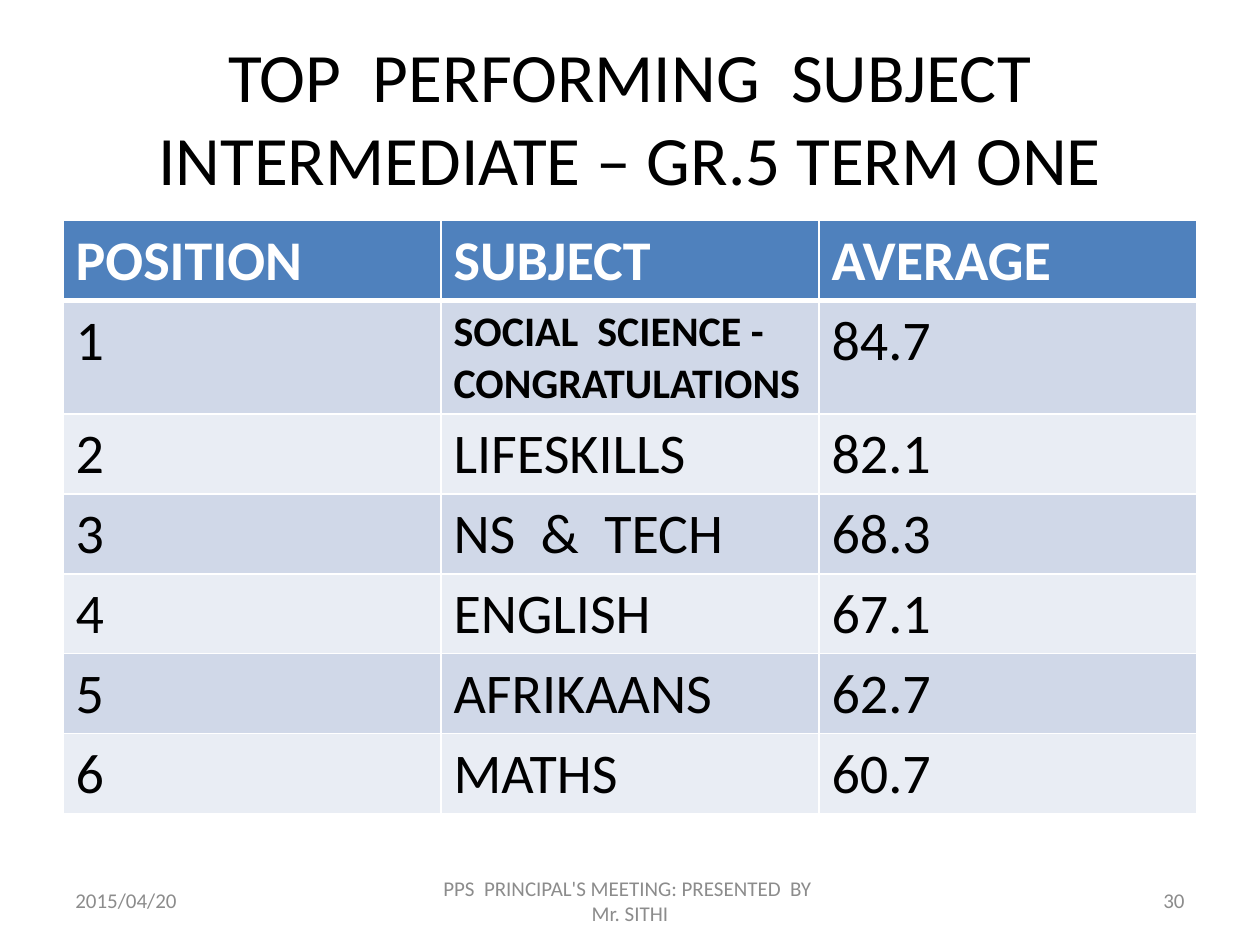
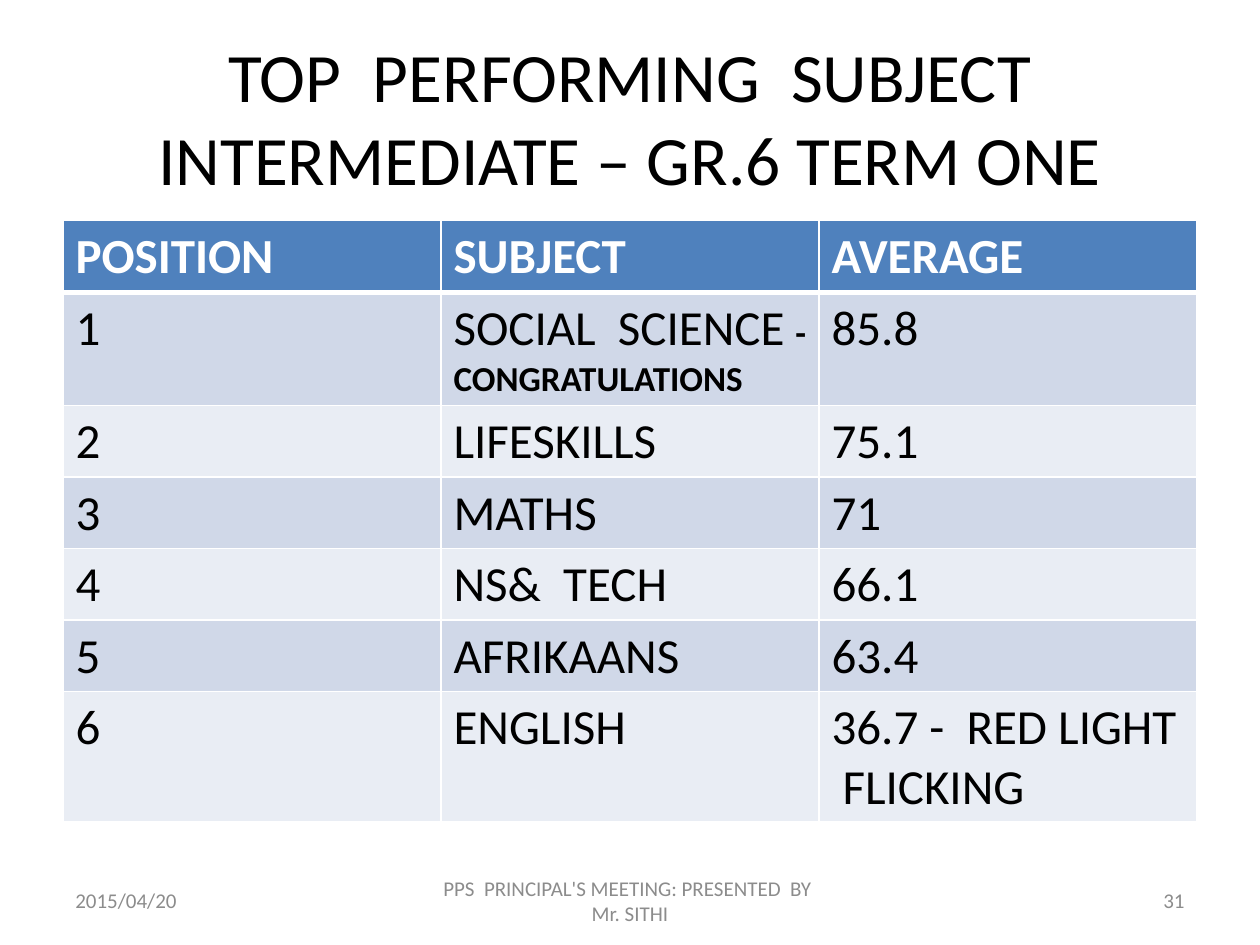
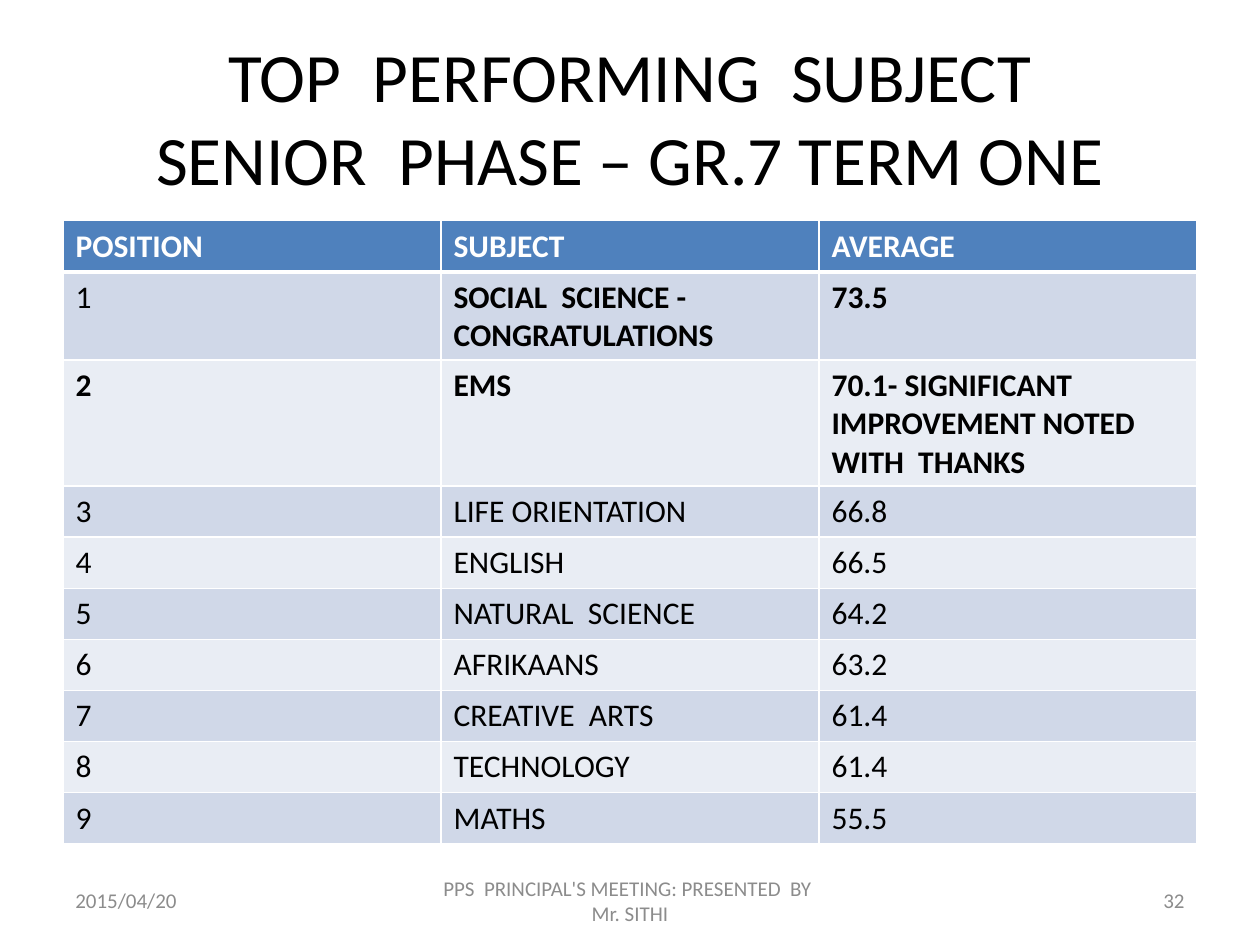
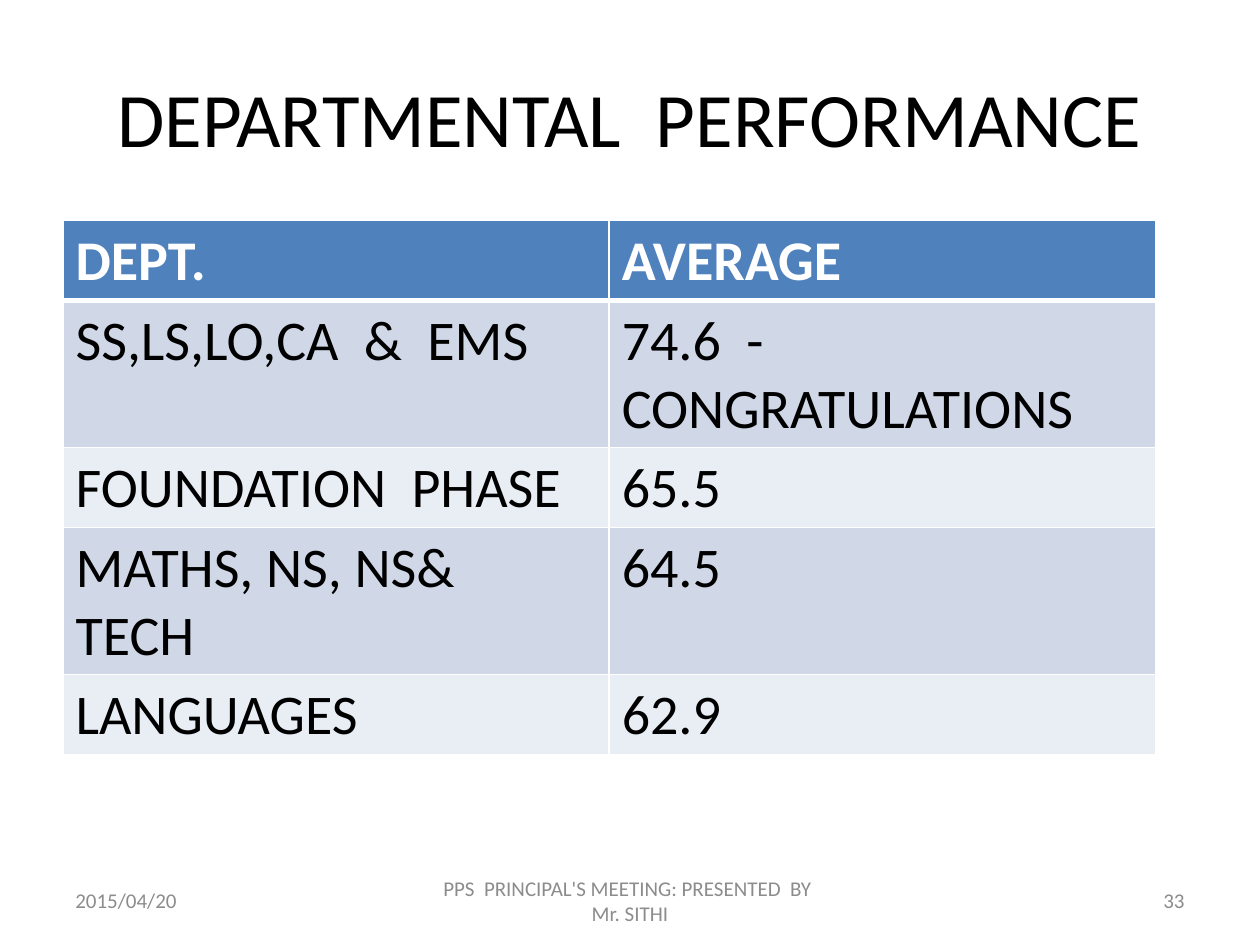
from lxml.etree import SubElement
from pptx import Presentation
from pptx.dml.color import RGBColor
from pptx.enum.text import MSO_ANCHOR, PP_ALIGN
from pptx.oxml.ns import qn
from pptx.util import Cm, Pt

# Shared style
FONT = "Calibri"
BLACK, WHITE, GREY = "000000", "FFFFFF", "8C8C8C"
HEADER_FILL = "4F81BD"
BAND_FILLS = ["D0D8E8", "E9EDF4"]
LEFT, TABLE_TOP, ROW_HEIGHT = 1.27, 4.45, 1.03
TITLE_BOX = (LEFT, 0.76, 22.86, 3.18)
FOOTER_TOP, FOOTER_HEIGHT = 17.65, 1.01
DATE = "2015/04/20"
MEETING = "PPS  PRINCIPAL'S MEETING: PRESENTED  BY  Mr. SITHI"
FIRST_PAGE = 30

# Content: a cell is plain text, or a list of (text, size, bold) runs
SUBJECT_HEADER = ["POSITION", "SUBJECT", "AVERAGE"]
SLIDES = [
    {
        "title": "TOP  PERFORMING  SUBJECT\nINTERMEDIATE – GR.5 TERM ONE",
        "title_size": 39.6, "size": 32, "col_width": 7.62,
        "rows": [
            SUBJECT_HEADER,
            ["1", [("SOCIAL  SCIENCE - CONGRATULATIONS", 24, True)], "84.7"],
            ["2", "LIFESKILLS", "82.1"],
            ["3", "NS  &  TECH", "68.3"],
            ["4", "ENGLISH", "67.1"],
            ["5", "AFRIKAANS", "62.7"],
            ["6", "MATHS", "60.7"],
        ],
    },
    {
        "title": "TOP  PERFORMING  SUBJECT\nINTERMEDIATE – GR.6 TERM ONE",
        "title_size": 39.6, "size": 28, "col_width": 7.62,
        "rows": [
            SUBJECT_HEADER,
            ["1", [("SOCIAL  SCIENCE ", 28, False), ("- CONGRATULATIONS", 20, True)], "85.8"],
            ["2", "LIFESKILLS", "75.1"],
            ["3", "MATHS", "71"],
            ["4", "NS&  TECH", "66.1"],
            ["5", "AFRIKAANS", "63.4"],
            ["6", "ENGLISH", "36.7 -  RED LIGHT  FLICKING"],
        ],
    },
    {
        "title": "TOP  PERFORMING  SUBJECT\nSENIOR  PHASE – GR.7 TERM ONE",
        "title_size": 39.6, "size": 18, "col_width": 7.62,
        "rows": [
            SUBJECT_HEADER,
            ["1", [("SOCIAL  SCIENCE - CONGRATULATIONS", 18, True)], [("73.5", 18, True)]],
            [[("2", 18, True)], [("EMS", 18, True)],
             [("70.1- SIGNIFICANT IMPROVEMENT NOTED WITH  THANKS", 18, True)]],
            ["3", "LIFE ORIENTATION", "66.8"],
            ["4", "ENGLISH", "66.5"],
            ["5", "NATURAL  SCIENCE", "64.2"],
            ["6", "AFRIKAANS", "63.2"],
            ["7", "CREATIVE  ARTS", "61.4"],
            ["8", "TECHNOLOGY", "61.4"],
            ["9", "MATHS", "55.5"],
        ],
    },
    {
        "title": "DEPARTMENTAL  PERFORMANCE",
        "title_size": 44, "size": 32, "col_width": 11.01,
        "rows": [
            ["DEPT.", "AVERAGE"],
            ["SS,LS,LO,CA  &  EMS", "74.6  -  CONGRATULATIONS"],
            ["FOUNDATION  PHASE", "65.5"],
            ["MATHS, NS, NS&  TECH", "64.5"],
            ["LANGUAGES", "62.9"],
        ],
    },
]


def rgb(color):
    return RGBColor.from_string(color)


def style(r, size, color, bold=False):
    r.font.name = FONT
    r.font.size = Pt(size)
    r.font.bold = bold
    r.font.color.rgb = rgb(color)


def add_text(s, box, text, size, color, align):
    tf = s.shapes.add_textbox(*map(Cm, box)).text_frame
    tf.word_wrap = True
    tf.vertical_anchor = MSO_ANCHOR.MIDDLE
    p = tf.paragraphs[0]
    p.text = text
    p.alignment = align
    for r in p.runs:
        style(r, size, color)


def set_borders(cell, top, bottom):
    tcPr = cell._tc.get_or_add_tcPr()
    for side, width in (("L", 1), ("R", 1), ("T", top), ("B", bottom)):
        ln = SubElement(tcPr, qn(f"a:ln{side}"), w=str(Pt(width)))
        fill = SubElement(ln, qn("a:solidFill"))
        SubElement(fill, qn("a:srgbClr"), val=WHITE)


def add_table(s, rows, size, col_width):
    n_rows, n_cols = len(rows), len(rows[0])
    table = s.shapes.add_table(n_rows, n_cols, Cm(LEFT), Cm(TABLE_TOP),
                               Cm(col_width * n_cols), Cm(ROW_HEIGHT * n_rows)).table
    for column in table.columns:
        column.width = Cm(col_width)
    for i, row in enumerate(rows):
        table.rows[i].height = Cm(ROW_HEIGHT)
        header = i == 0
        for j, content in enumerate(row):
            cell = table.cell(i, j)
            # A thick rule separates the header from the body
            set_borders(cell, top=3 if i == 1 else 1, bottom=3 if header else 1)
            cell.fill.solid()
            cell.fill.fore_color.rgb = rgb(HEADER_FILL if header else BAND_FILLS[(i - 1) % 2])
            runs = [(content, size, header)] if isinstance(content, str) else content
            p = cell.text_frame.paragraphs[0]
            for text, run_size, bold in runs:
                r = p.add_run()
                r.text = text
                style(r, run_size, WHITE if header else BLACK, bold)


def add_footer(s, page):
    for left, width, text, align in (
        (LEFT, 5.93, DATE, PP_ALIGN.LEFT),
        (8.68, 8.04, MEETING, PP_ALIGN.CENTER),
        (18.2, 5.93, str(page), PP_ALIGN.RIGHT),
    ):
        add_text(s, (left, FOOTER_TOP, width, FOOTER_HEIGHT), text, 12, GREY, align)


def main():
    prs = Presentation()
    prs.slide_width, prs.slide_height = Cm(25.4), Cm(19.05)
    for page, content in enumerate(SLIDES, FIRST_PAGE):
        s = prs.slides.add_slide(prs.slide_layouts[6])
        s.background.fill.solid()
        s.background.fill.fore_color.rgb = rgb(WHITE)
        add_text(s, TITLE_BOX, content["title"], content["title_size"], BLACK, PP_ALIGN.CENTER)
        add_table(s, content["rows"], content["size"], content["col_width"])
        add_footer(s, page)
    prs.save("out.pptx")


if __name__ == "__main__":
    main()
